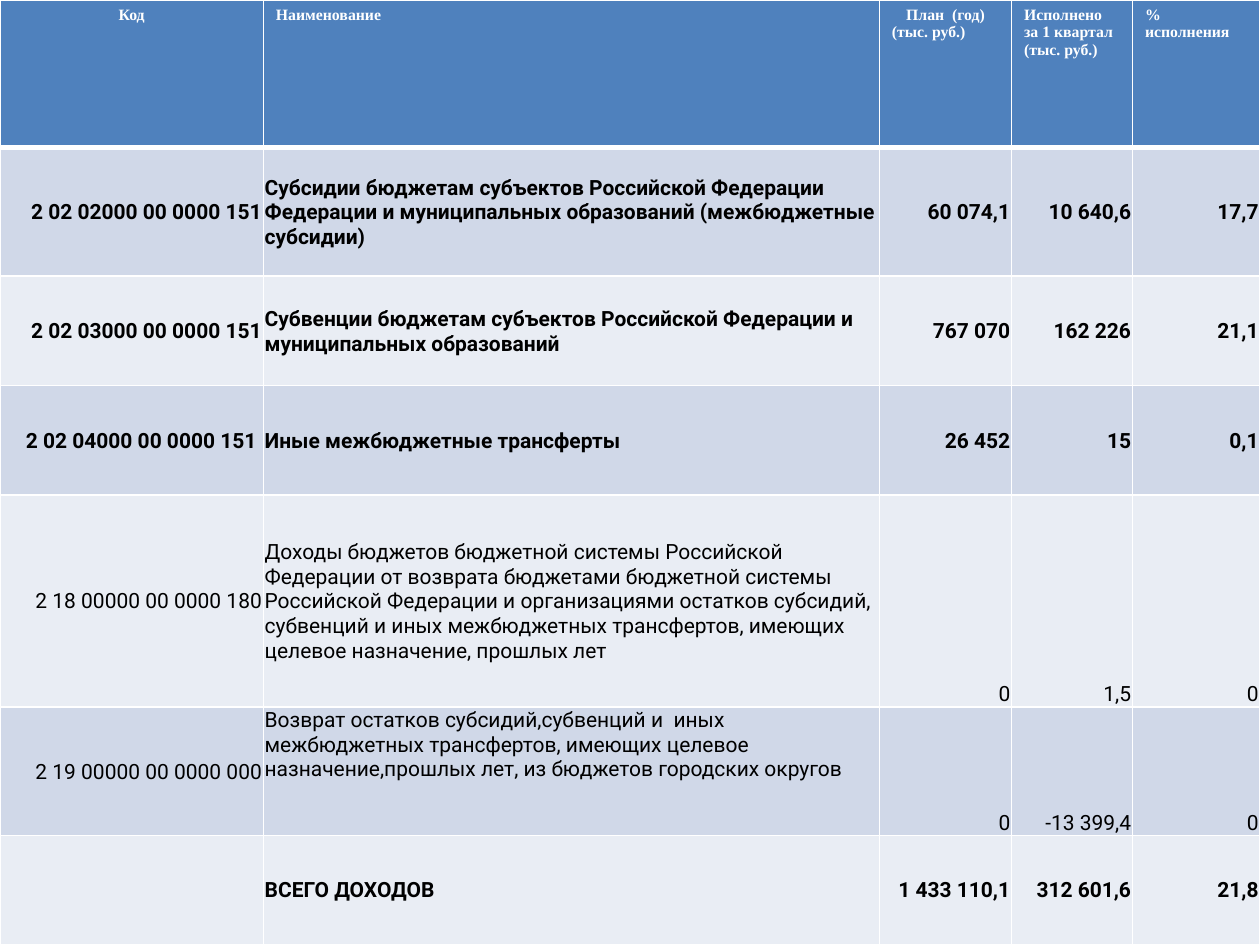
from lxml.etree import SubElement
from pptx import Presentation
from pptx.dml.color import RGBColor
from pptx.enum.text import MSO_ANCHOR, PP_ALIGN
from pptx.oxml.ns import qn
from pptx.util import Pt

WHITE, BLACK, BLUE = "FFFFFF", "000000", "4F81BD"
BANDS = ("D0D8E8", "E9EDF4")
LEFT, CENTER, RIGHT = PP_ALIGN.LEFT, PP_ALIGN.CENTER, PP_ALIGN.RIGHT
TOP, MIDDLE, BOTTOM = MSO_ANCHOR.TOP, MSO_ANCHOR.MIDDLE, MSO_ANCHOR.BOTTOM

COLUMNS = (150.5, 352, 75.6, 69.1, 72.8)
HEIGHTS = (84.4, 73.4, 62.6, 62.6, 121, 73.4, 62.6)
HEADERS = (
    (("Код", CENTER),),
    (("Наименование", LEFT),),
    (("План  (год)", CENTER), ("(тыс. руб.)", LEFT)),
    (("Исполнено за 1 квартал (тыс. руб.)", LEFT),),
    (("% исполнения", LEFT),),
)
ROWS = (
    ("2 02 02000 00 0000 151",
     "Субсидии бюджетам субъектов Российской Федерации Федерации и "
     "муниципальных образований (межбюджетные субсидии)",
     "60 074,1", "10 640,6", "17,7"),
    ("2 02 03000 00 0000 151",
     "Субвенции бюджетам субъектов Российской Федерации и муниципальных образований",
     "767 070", "162 226", "21,1"),
    ("2 02 04000 00 0000 151 ", "Иные межбюджетные трансферты", "26 452", "15", "0,1"),
    ("2 18 00000 00 0000 180",
     "Доходы бюджетов бюджетной системы Российской Федерации от возврата "
     "бюджетами бюджетной системы Российской Федерации и организациями "
     "остатков субсидий, субвенций и иных межбюджетных трансфертов, "
     "имеющих целевое назначение, прошлых лет",
     "0", "1,5", "0"),
    ("2 19 00000 00 0000 000",
     "Возврат остатков субсидий,субвенций и  иных межбюджетных трансфертов, "
     "имеющих целевое назначение,прошлых лет, из бюджетов городских округов",
     "0", "-13 399,4", "0"),
    ("", "ВСЕГО ДОХОДОВ", "1 433 110,1", "312 601,6", "21,8"),
)
RETURNS = (4, 5)


def rgb(value):
    return RGBColor.from_string(value)


def write(p, text, font="Roboto", size=12, color=BLACK, bold=False, align=LEFT):
    p.alignment = align
    r = p.add_run()
    r.text = text
    r.font.name = font
    r.font.size = Pt(size)
    r.font.bold = bold
    r.font.color.rgb = rgb(color)


class Deck:
    def __init__(self, width, height):
        self.prs = Presentation()
        self.prs.slide_width, self.prs.slide_height = Pt(width), Pt(height)
        self.s = self.prs.slides.add_slide(self.prs.slide_layouts[6])
        self.header = dict(font="Times New Roman", size=9, color=WHITE, bold=True)

    def table(self, columns, heights):
        frame = self.s.shapes.add_table(
            len(heights), len(columns), Pt(0), Pt(0), Pt(sum(columns)), Pt(sum(heights)))
        tbl = frame.table
        tbl.horz_banding = False
        for column, width in zip(tbl.columns, columns):
            column.width = Pt(width)
        for row, height in zip(tbl.rows, heights):
            row.height = Pt(height)
        return tbl

    def cell(self, cell, fill, bottom=1):
        props = cell._tc.get_or_add_tcPr()
        for side, width in (("L", 1), ("R", 1), ("T", 1), ("B", bottom)):
            line = SubElement(props, qn(f"a:ln{side}"), w=str(Pt(width)))
            SubElement(SubElement(line, qn("a:solidFill")), qn("a:srgbClr"), val=WHITE)
        cell.fill.solid()
        cell.fill.fore_color.rgb = rgb(fill)

    def header_cell(self, cell, lines):
        self.cell(cell, BLUE, bottom=3)
        tf = cell.text_frame
        for i, (text, align) in enumerate(lines):
            p = tf.add_paragraph() if i else tf.paragraphs[0]
            write(p, text, align=align, **self.header)

    def body_cell(self, cell, text, fill, anchor, **style):
        self.cell(cell, fill)
        if text:
            cell.margin_left = cell.margin_right = cell.margin_top = Pt(0.75)
            cell.margin_bottom = Pt(0)
            cell.vertical_anchor = anchor
            write(cell.text_frame.paragraphs[0], text, **style)


def body_anchor(row, col):
    if row in RETURNS and col > 1:
        return BOTTOM
    return TOP if (row, col) == (5, 1) else MIDDLE


def main():
    deck = Deck(720, 540)
    tbl = deck.table(COLUMNS, HEIGHTS)
    for col, lines in enumerate(HEADERS):
        deck.header_cell(tbl.cell(0, col), lines)
    for row, values in enumerate(ROWS, 1):
        for col, text in enumerate(values):
            deck.body_cell(tbl.cell(row, col), text, BANDS[(row - 1) % 2],
                           body_anchor(row, col), bold=row not in RETURNS,
                           align=LEFT if col == 1 else RIGHT)
    deck.prs.save("out.pptx")


if __name__ == "__main__":
    main()
